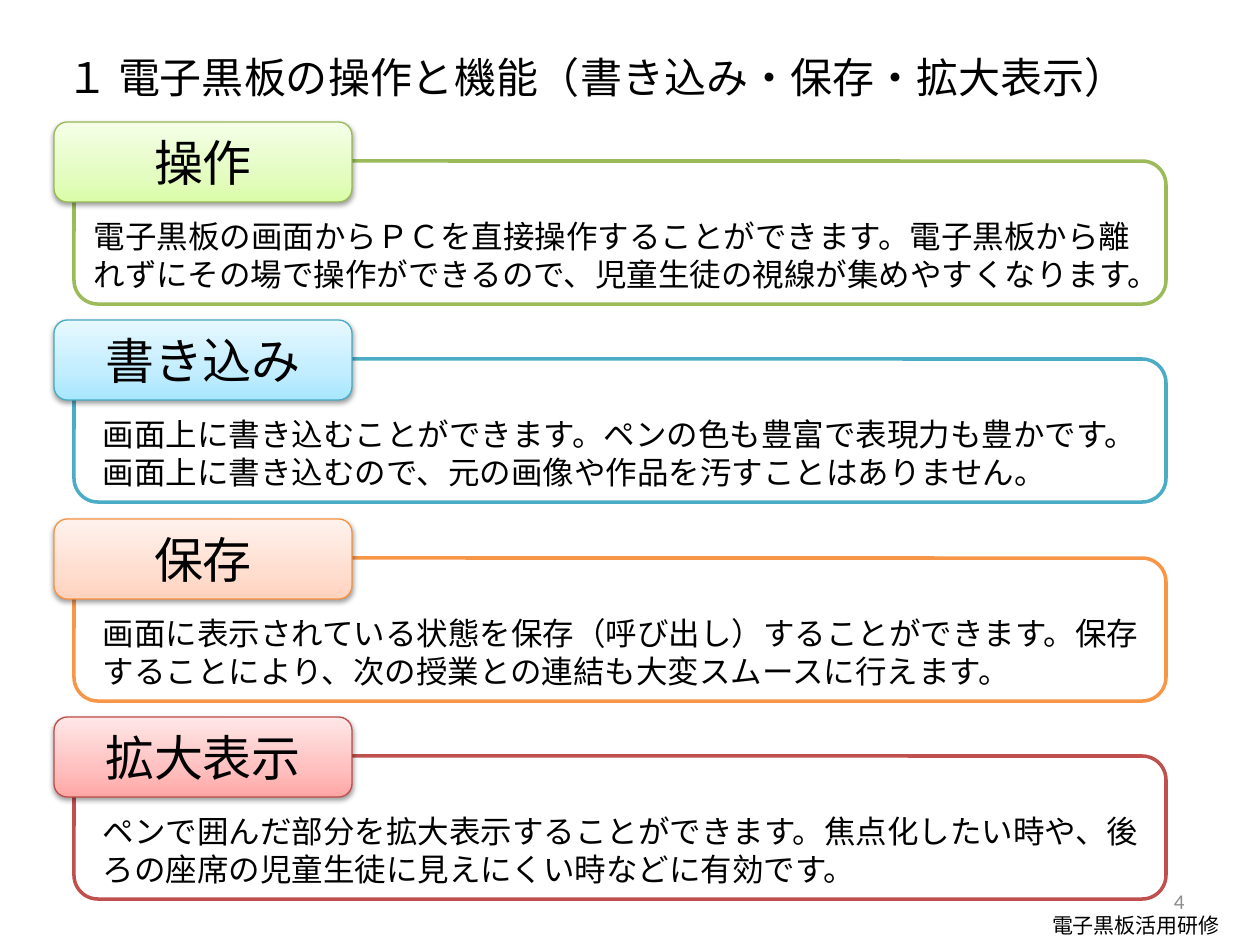
import copy
import dataclasses

import pptx
import pptx.dml.color
import pptx.enum.shapes
import pptx.enum.text
import pptx.oxml
import pptx.oxml.ns
import pptx.util

PX = 914400 / 126
ALIGN = pptx.enum.text.PP_ALIGN
ANCHOR = pptx.enum.text.MSO_ANCHOR
ROUNDED = pptx.enum.shapes.MSO_SHAPE.ROUNDED_RECTANGLE
qn = pptx.oxml.ns.qn


@dataclasses.dataclass(frozen=True)
class Theme:
    font: str = "Noto Sans CJK JP"
    number_font: str = "Calibri"
    ink: str = "000000"
    grey: str = "8C8C8C"
    paper: str = "FFFFFF"
    title_size: int = 24
    heading_size: int = 28
    body_size: int = 18
    body_leading: int = 22
    small_size: int = 12
    panel_line: float = 2
    heading_line: float = 0.75


THEME = Theme()
STOPS = (0, 0.35, 1)

# heading, body, panel line, heading line, gradient from bottom to top, left inset
SECTIONS = [
    ("操作",
     "電子黒板の画面からＰＣを直接操作することができます。電子黒板から離れずにその場で操作ができるので、"
     "児童生徒の視線が集めやすくなります。",
     "9BBB59", "98B955", ("DAFDA7", "E4FCC2", "F5FFE7"), 13),
    ("書き込み",
     "画面上に書き込むことができます。ペンの色も豊富で表現力も豊かです。"
     "画面上に書き込むので、元の画像や作品を汚すことはありません。",
     "4BACC6", "46AAC5", ("A7E6FF", "C1EDFF", "E7F8FF"), 22),
    ("保存",
     "画面に表示されている状態を保存（呼び出し）することができます。"
     "保存することにより、次の授業との連結も大変スムースに行えます。",
     "F79646", "F69240", ("FFD2BD", "FFDED0", "FFF2ED"), 22),
    ("拡大表示",
     "ペンで囲んだ部分を拡大表示することができます。焦点化したい時や、"
     "後ろの座席の児童生徒に見えにくい時などに有効です。",
     "C0504D", "BF4C48", ("FFA6A5", "FFC0BF", "FFE7E7"), 22),
]


def px(length):
    return pptx.util.Emu(round(length * PX))


def emu_box(box):
    return [px(length) for length in box]


def rgb(color):
    return pptx.dml.color.RGBColor.from_string(color)


def set_attributes(target, values):
    for name, value in values.items():
        setattr(target, name, value)


def write(shape, text, size, color=THEME.ink, font=THEME.font,
          align=ALIGN.LEFT, leading=None, **frame_format):
    """Put one formatted paragraph in the shape; frame_format goes to its text frame."""
    frame = shape.text_frame
    set_attributes(frame, {"word_wrap": True, "vertical_anchor": ANCHOR.MIDDLE, **frame_format})
    para = frame.paragraphs[0]
    set_attributes(para, {"alignment": align, "line_spacing": leading})
    span = para.add_run()
    span.text = text
    set_attributes(span.font, {"size": pptx.util.Pt(size), "name": font})
    span.font.color.rgb = rgb(color)
    east_asian = pptx.oxml.parse_xml(
        f'<a:ea {pptx.oxml.ns.nsdecls("a")} typeface="{font}"/>')
    span.font._element.find(qn("a:latin")).addnext(east_asian)


def add_rounded(page, box, line_color, line_width):
    shape = page.shapes.add_shape(ROUNDED, *emu_box(box))
    shape.shadow.inherit = False
    shape.line.color.rgb = rgb(line_color)
    shape.line.width = pptx.util.Pt(line_width)
    return shape


def fill_gradient(shape, colors):
    shape.fill.gradient()
    shape.fill.gradient_angle = 90
    stop_list = shape._element.spPr.find(".//" + qn("a:gsLst"))
    stop_list.append(copy.deepcopy(stop_list[0]))
    for stop, position, color in zip(shape.fill.gradient_stops, STOPS, colors):
        stop.position = position
        stop.color.rgb = rgb(color)


def add_soft_shadow(shape):
    shape._element.spPr.find(qn("a:effectLst")).append(pptx.oxml.parse_xml(
        f'<a:outerShdw {pptx.oxml.ns.nsdecls("a")} blurRad="40000" dist="20000" '
        'dir="5400000" rotWithShape="0"><a:srgbClr val="000000">'
        '<a:alpha val="38000"/></a:srgbClr></a:outerShdw>'))


def add_section(page, box, section):
    """Draw an outlined panel with a heading tab over its top left corner."""
    left, top, width, height = box
    heading, body, panel_color, heading_color, gradient, inset = section
    panel = add_rounded(page, (left + 20, top + 39, width - 20, height - 39),
                        panel_color, THEME.panel_line)
    panel.fill.solid()
    panel.fill.fore_color.rgb = rgb(THEME.paper)
    write(panel, body, THEME.body_size, leading=pptx.util.Pt(THEME.body_leading),
          vertical_anchor=ANCHOR.BOTTOM, margin_left=px(inset), margin_bottom=px(4))

    tab = add_rounded(page, (left, top, 298, 80), heading_color, THEME.heading_line)
    fill_gradient(tab, gradient)
    add_soft_shadow(tab)
    write(tab, heading, THEME.heading_size, align=ALIGN.CENTER)


def add_title(page, box):
    title = page.shapes.title
    set_attributes(title, dict(zip(("left", "top", "width", "height"), emu_box(box))))
    write(title, "１ 電子黒板の操作と機能（書き込み・保存・拡大表示）", THEME.title_size)


def add_footer(page, box):
    left, top, width, height = box
    course = page.shapes.add_textbox(*emu_box((left + 109, top + 30, width - 109, height - 30)))
    write(course, "電子黒板活用研修", THEME.small_size, align=ALIGN.CENTER)
    number = page.shapes.add_textbox(*emu_box((left, top, 294, 50)))
    write(number, "4", THEME.small_size, THEME.grey, THEME.number_font, ALIGN.RIGHT)


def main():
    deck = pptx.Presentation()
    set_attributes(deck, {"slide_width": px(1260), "slide_height": px(945)})
    page = deck.slides.add_slide(deck.slide_layouts[5])
    add_title(page, (54, 45, 1206, 63))
    for index, section in enumerate(SECTIONS):
        add_section(page, (54, 122 + index * 397 // 2, 1112, 182), section)
    add_footer(page, (903, 876, 357, 68))
    deck.save("out.pptx")


if __name__ == "__main__":
    main()
